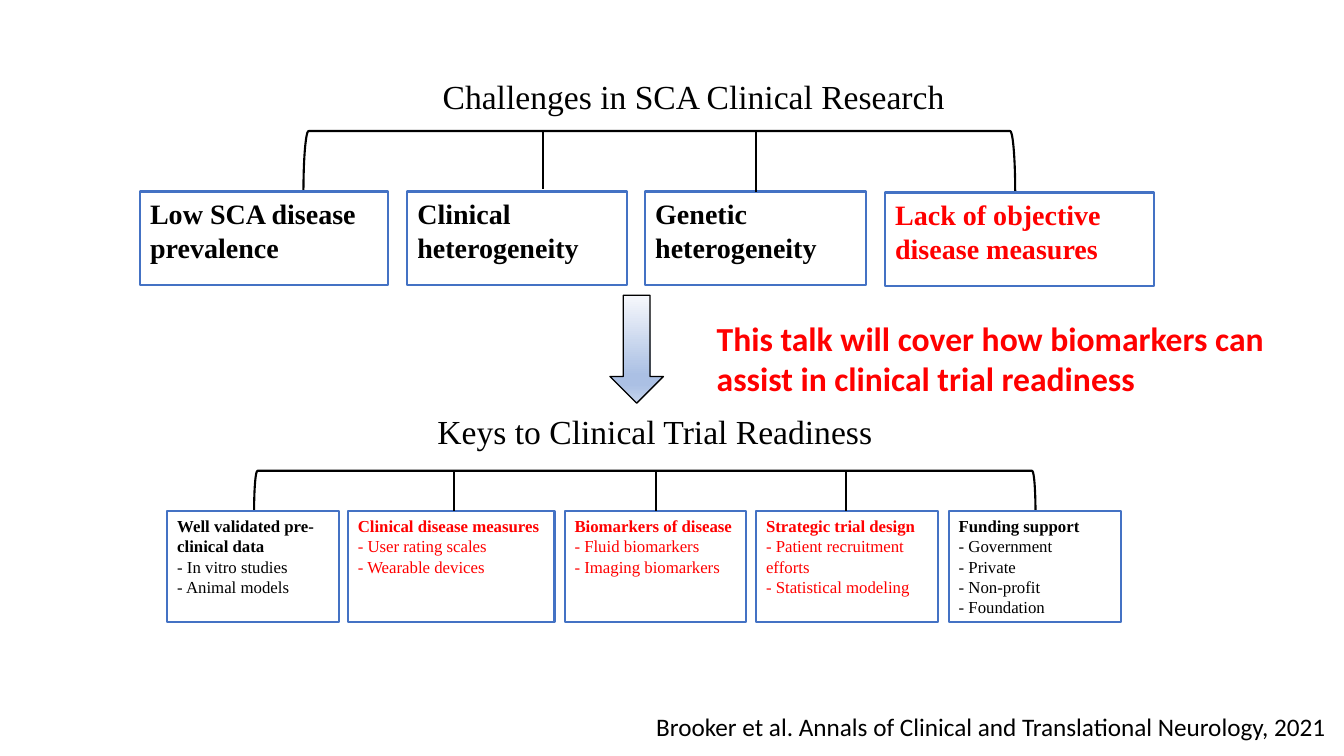
from copy import deepcopy
from dataclasses import dataclass

from lxml import etree
from pptx import Presentation
from pptx.dml.color import RGBColor
from pptx.enum.shapes import MSO_CONNECTOR, MSO_SHAPE
from pptx.enum.text import MSO_ANCHOR, MSO_AUTO_SIZE, PP_ALIGN
from pptx.oxml.ns import qn
from pptx.util import Inches, Pt

RECTANGLE = MSO_SHAPE.RECTANGLE
BRACKET = MSO_SHAPE.RIGHT_BRACKET
DOWN_ARROW = MSO_SHAPE.DOWN_ARROW
STRAIGHT = MSO_CONNECTOR.STRAIGHT
TOP = MSO_ANCHOR.TOP
LEFT = PP_ALIGN.LEFT
NO_FIT = MSO_AUTO_SIZE.NONE
GROW = MSO_AUTO_SIZE.SHAPE_TO_FIT_TEXT

COLORS = {"black": "000000", "white": "FFFFFF", "blue": "4472C4", "red": "FF0000"}
ARROW_STOPS = [(0, "F6F8FC"), (0.74, "ABC0E4"), (0.83, "ABC0E4"), (1, "C7D5ED")]
SERIF = "Times New Roman"
SANS = "Calibri"


@dataclass
class Topic:
    left: float
    width: float
    heading: str
    points: tuple[str, ...] = ()
    color: str = "black"
    drop: float = 0


@dataclass
class Tier:
    top: float
    height: float
    size: int
    bracket: tuple[float, float, float, float]
    branches: list[tuple[float, float, float]]
    topics: list[Topic]


@dataclass
class Caption:
    box: tuple[float, float, float, float]
    text: str
    size: int
    font: str
    color: str = "black"
    bold: bool = False
    wrap: bool = False


CHALLENGES = Tier(
    1.9, 0.93, 20, (3.01, 1.3, 7.06, 0.61),
    [(5.39, 1.29, 1.88), (7.5, 1.31, 1.9)],
    [
        Topic(1.39, 2.46, "Low SCA disease prevalence"),
        Topic(4.04, 2.18, "Clinical heterogeneity"),
        Topic(6.4, 2.19, "Genetic heterogeneity"),
        Topic(8.78, 2.67, "Lack of objective disease measures", color="red", drop=0.01),
    ],
)
KEYS = Tier(
    5.07, 1.1, 12, (2.52, 4.67, 7.75, 0.4),
    [(x, 4.67, 5.07) for x in (4.5, 6.51, 8.39)],
    [
        Topic(1.66, 1.7, "Well validated pre-clinical data",
              ("- In vitro studies", "- Animal models")),
        Topic(3.45, 2.05, "Clinical disease measures",
              ("- User rating scales", "- Wearable devices"), "red"),
        Topic(5.6, 1.8, "Biomarkers of disease",
              ("- Fluid biomarkers", "- Imaging biomarkers"), "red"),
        Topic(7.5, 1.8, "Strategic trial design",
              ("- Patient recruitment efforts", "- Statistical modeling"), "red"),
        Topic(9.41, 1.71, "Funding support",
              ("- Government", "- Private", "- Non-profit", "- Foundation")),
    ],
)
TITLE = Caption((4.29, 0.7, 5.23, 0.5), "Challenges in SCA Clinical Research", 24, SERIF)
CAPTIONS = [
    Caption((4.24, 4.03, 4.55, 0.5), "Keys to Clinical Trial Readiness", 24, SERIF),
    Caption((6.41, 7.01, 6.92, 0.4),
            "Brooker et al. Annals of Clinical and Translational Neurology, 2021", 18, SANS),
    Caption((7.01, 3.1, 6.32, 0.91),
            "This talk will cover how biomarkers can assist in clinical trial readiness",
            24, SANS, "red", True, True),
]


def rgb(name: str) -> RGBColor:
    return RGBColor.from_string(COLORS[name])


def add_text(paragraph, text: str, size: int, font: str, color: str, bold: bool) -> None:
    paragraph.alignment = LEFT
    run = paragraph.add_run()
    run.text = text
    run.font.size = Pt(size)
    run.font.name = font
    run.font.bold = bold
    run.font.color.rgb = rgb(color)


def set_outline(line, color: str, width: float) -> None:
    line.color.rgb = rgb(color)
    line.width = Pt(width)


def add_outlined(slide, kind, box: tuple[float, ...], color: str, width: float):
    shape = slide.shapes.add_shape(kind, *map(Inches, box))
    shape.shadow.inherit = False
    set_outline(shape.line, color, width)
    return shape


def draw_topic(slide, tier: Tier, topic: Topic) -> None:
    box = (topic.left, tier.top + topic.drop, topic.width, tier.height)
    card = add_outlined(slide, RECTANGLE, box, "blue", 1.5)
    card.fill.solid()
    card.fill.fore_color.rgb = rgb("white")
    frame = card.text_frame
    frame.word_wrap = True
    frame.vertical_anchor = TOP
    add_text(frame.paragraphs[0], topic.heading, tier.size, SERIF, topic.color, True)
    for point in topic.points:
        add_text(frame.add_paragraph(), point, tier.size, SERIF, topic.color, False)


def draw_tier(slide, tier: Tier) -> None:
    left, top, span, depth = tier.bracket
    unrotated = (left + (span - depth) / 2, top - (span - depth) / 2, depth, span)
    bracket = add_outlined(slide, BRACKET, unrotated, "black", 1.5)
    bracket.fill.background()
    bracket.rotation = 270
    for topic in tier.topics:
        draw_topic(slide, tier, topic)
    for x, start, end in tier.branches:
        branch = slide.shapes.add_connector(STRAIGHT, *map(Inches, (x, start, x, end)))
        set_outline(branch.line, "black", 1.5)
        etree.SubElement(branch.element.spPr, qn("a:effectLst"))


def draw_arrow(slide) -> None:
    arrow = add_outlined(slide, DOWN_ARROW, (6.05, 2.93, 0.53, 1.07), "black", 1)
    arrow.fill.gradient()
    arrow.fill.gradient_angle = 270
    stops = arrow.element.spPr.find(qn("a:gradFill")).find(qn("a:gsLst"))
    for _ in ARROW_STOPS[2:]:
        stops.append(deepcopy(stops[0]))
    for stop, (position, color) in zip(arrow.fill.gradient_stops, ARROW_STOPS):
        stop.position = position
        stop.color.rgb = RGBColor.from_string(color)


def fill_caption(shape, caption: Caption, fit) -> None:
    shape.left, shape.top, shape.width, shape.height = map(Inches, caption.box)
    frame = shape.text_frame
    frame.word_wrap = caption.wrap
    frame.auto_size = fit
    frame.vertical_anchor = TOP
    add_text(frame.paragraphs[0], caption.text, caption.size, caption.font,
             caption.color, caption.bold)


def main() -> None:
    deck = Presentation()
    deck.slide_width, deck.slide_height = Inches(13.33), Inches(7.5)
    slide = deck.slides.add_slide(deck.slide_layouts[5])
    fill_caption(slide.shapes.title, TITLE, NO_FIT)
    for tier in (CHALLENGES, KEYS):
        draw_tier(slide, tier)
    draw_arrow(slide)
    for caption in CAPTIONS:
        fill_caption(slide.shapes.add_textbox(*map(Inches, caption.box)), caption, GROW)
    deck.save("out.pptx")


if __name__ == "__main__":
    main()
